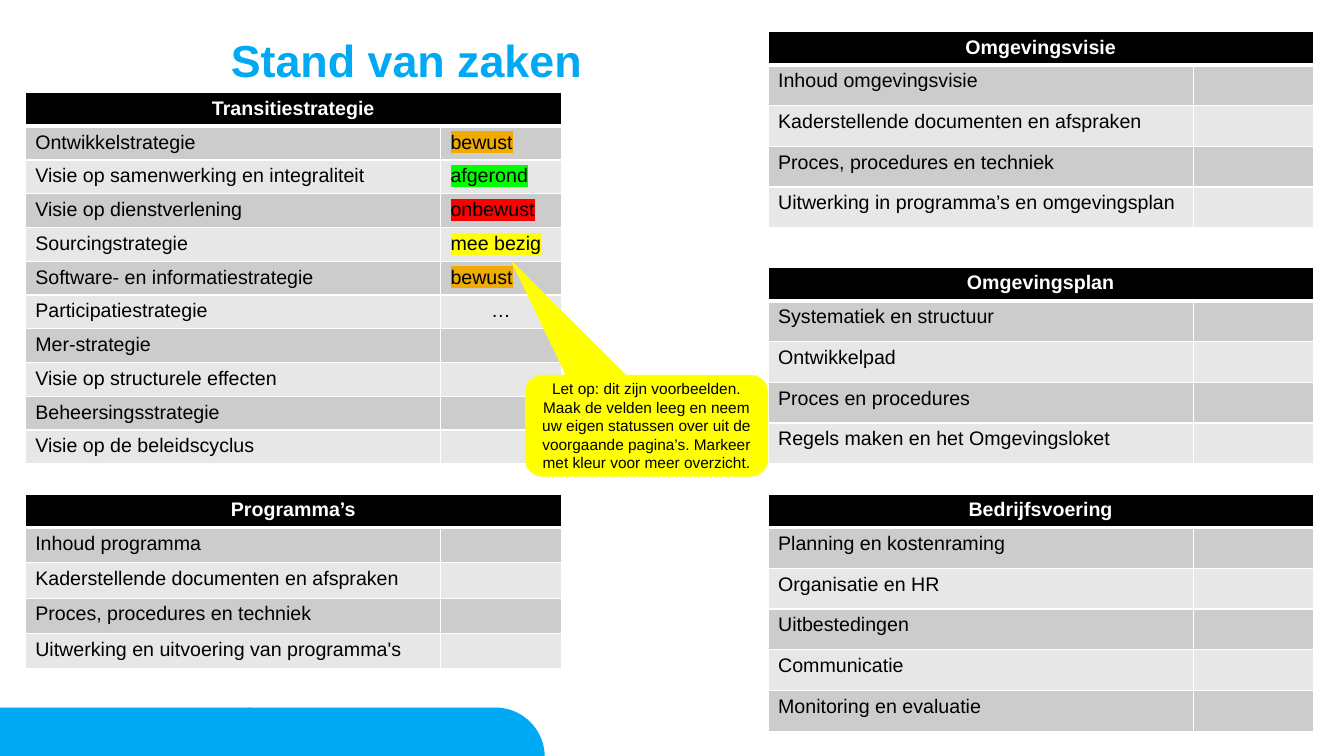
from math import cos, pi, sin

from lxml.etree import SubElement
from pptx import Presentation
from pptx.dml.color import RGBColor
from pptx.enum.shapes import MSO_SHAPE
from pptx.enum.text import MSO_ANCHOR, PP_ALIGN
from pptx.oxml.ns import qn
from pptx.util import Pt

COLORS = {
    "blue": "00A9F3", "black": "000000", "white": "FFFFFF",
    "dark_band": "CCCCCC", "light_band": "E7E7E7", "callout": "FFFF00",
}
STATUS_COLORS = {
    "bewust": "F0AB00", "afgerond": "00FF00",
    "onbewust": "FF0000", "mee bezig": "FFFF00",
}
FONT = "Arial"
HEADER_HEIGHT = 23.3
LEFT, RIGHT = (18, (296.6, 86.4)), (548.6, (303.8, 85.7))  # x, column widths
TOP, MIDDLE, BOTTOM = 22.3, 190.8, 352.8

STRATEGIES = [
    ("Ontwikkelstrategie", "bewust"),
    ("Visie op samenwerking en integraliteit", "afgerond"),
    ("Visie op dienstverlening", "onbewust"),
    ("Sourcingstrategie", "mee bezig"),
    ("Software- en informatiestrategie", "bewust"),
    ("Participatiestrategie", "…"),
    ("Mer-strategie", ""),
    ("Visie op structurele effecten", ""),
    ("Beheersingsstrategie", ""),
    ("Visie op de beleidscyclus", ""),
]
VISION = ["Inhoud omgevingsvisie", "Kaderstellende documenten en afspraken",
          "Proces, procedures en techniek",
          "Uitwerking in programma’s en omgevingsplan"]
PLAN = ["Systematiek en structuur", "Ontwikkelpad", "Proces en procedures",
        "Regels maken en het Omgevingsloket"]
OPERATIONS = ["Planning en kostenraming", "Organisatie en HR", "Uitbestedingen",
              "Communicatie", "Monitoring en evaluatie"]
PROGRAMMES = ["Inhoud programma", "Kaderstellende documenten en afspraken",
              "Proces, procedures en techniek",
              "Uitwerking en uitvoering van programma's"]
CALLOUT = ("Let op: dit zijn voorbeelden. Maak de velden leeg en neem uw eigen "
           "statussen over uit de voorgaande pagina’s. Markeer met kleur voor "
           "meer overzicht.")


def rgb(name):
    return RGBColor.from_string(COLORS[name])


def write(tf, text, size, color, bold=False, align=PP_ALIGN.LEFT, highlight=None):
    p = tf.paragraphs[0]
    p.text = text
    p.alignment = align
    if not text:
        SubElement(p._p, qn("a:endParaRPr"), sz=str(size * 100))
    for r in p.runs:
        r.font.size = Pt(size)
        r.font.bold = bold
        r.font.color.rgb = rgb(color)
        if highlight:
            mark = SubElement(r.font._element, qn("a:highlight"))
            SubElement(mark, qn("a:srgbClr"), val=highlight)
        r.font.name = FONT
    return p


def paint(s, color):
    s.shadow.inherit = False
    s.fill.solid()
    s.fill.fore_color.rgb = rgb(color)
    s.line.fill.background()


def add_footer_tab(slide, x, y=505.4, width=212, height=35.3):
    """Bar whose top right corner is a quarter circle as high as the bar."""
    centre = x + width - height
    arc = [(centre + height * sin(a), y + height - height * cos(a))
           for a in (i * pi / 40 for i in range(21))]
    builder = slide.shapes.build_freeform(Pt(x), Pt(y + height), scale=1.0)
    builder.add_line_segments(
        [(Pt(px), Pt(py)) for px, py in [(x, y)] + arc], close=True)
    paint(builder.convert_to_shape(), "blue")


def add_title(slide, text):
    tf = slide.shapes.add_textbox(Pt(164.9), Pt(24.5), Pt(384.5), Pt(41)).text_frame
    tf.word_wrap = True
    tf.margin_left = tf.margin_right = tf.margin_top = tf.margin_bottom = 0
    tf.vertical_anchor = MSO_ANCHOR.MIDDLE
    write(tf, text, 32, "blue", bold=True).line_spacing = 0.9


def style_cell(cell, fill, top=1, bottom=1):
    """White borders of the given widths around a filled cell."""
    tcPr = cell._tc.get_or_add_tcPr()
    for side, width in (("L", 1), ("R", 1), ("T", top), ("B", bottom)):
        ln = SubElement(tcPr, qn("a:ln" + side), w=str(Pt(width)))
        solid = SubElement(ln, qn("a:solidFill"))
        SubElement(solid, qn("a:srgbClr"), val=COLORS["white"])
    cell.fill.solid()
    cell.fill.fore_color.rgb = rgb(fill)


def add_status_table(slide, column, y, row_height, heading, rows):
    x, widths = column
    height = HEADER_HEIGHT + row_height * len(rows)
    table = slide.shapes.add_table(len(rows) + 1, 2, Pt(x), Pt(y),
                                   Pt(sum(widths)), Pt(height)).table
    table.first_row = table.horz_banding = False
    for col, width in zip(table.columns, widths):
        col.width = Pt(width)
    for i, row in enumerate(table.rows):
        row.height = Pt(row_height if i else HEADER_HEIGHT)

    for cell, text in zip(table.rows[0].cells, (heading, "")):
        style_cell(cell, "black", bottom=3)
        write(cell.text_frame, text, 14, "white", True, PP_ALIGN.CENTER)
    table.cell(0, 0).merge(table.cell(0, 1))

    for i, texts in enumerate(rows, 1):
        for cell, text in zip(table.rows[i].cells, texts):
            style_cell(cell, "dark_band" if i % 2 else "light_band",
                       top=3 if i == 1 else 1)
            write(cell.text_frame, text, 14, "black",
                  align=PP_ALIGN.CENTER if text == "…" else PP_ALIGN.LEFT,
                  highlight=STATUS_COLORS.get(text))


def add_callout(slide, text):
    s = slide.shapes.add_shape(MSO_SHAPE.ROUNDED_RECTANGULAR_CALLOUT,
                               Pt(375.1), Pt(267.8), Pt(173.5), Pt(72.7))
    for i, value in enumerate((-0.56, -1.63, 0.17)):
        s.adjustments[i] = value
    paint(s, "callout")
    s.text_frame.word_wrap = True
    s.text_frame.vertical_anchor = MSO_ANCHOR.MIDDLE
    write(s.text_frame, text, 11, "black", align=PP_ALIGN.CENTER)


def without_status(topics):
    return [(topic, "") for topic in topics]


def main():
    prs = Presentation()
    prs.slide_width, prs.slide_height = Pt(960), Pt(540)
    slide = prs.slides.add_slide(prs.slide_layouts[6])
    for x in (-0.7, 177.1):
        add_footer_tab(slide, x)
    add_title(slide, "Stand van zaken")
    add_status_table(slide, LEFT, 66.2, 24.1, "Transitiestrategie", STRATEGIES)
    for column, y, row_height, heading, topics in (
        (RIGHT, TOP, 29.1, "Omgevingsvisie", VISION),
        (RIGHT, MIDDLE, 29.1, "Omgevingsplan", PLAN),
        (RIGHT, BOTTOM, 29.1, "Bedrijfsvoering", OPERATIONS),
        (LEFT, BOTTOM, 25.2, "Programma’s", PROGRAMMES),
    ):
        add_status_table(slide, column, y, row_height, heading,
                         without_status(topics))
    add_callout(slide, CALLOUT)
    prs.save("out.pptx")


if __name__ == "__main__":
    main()
